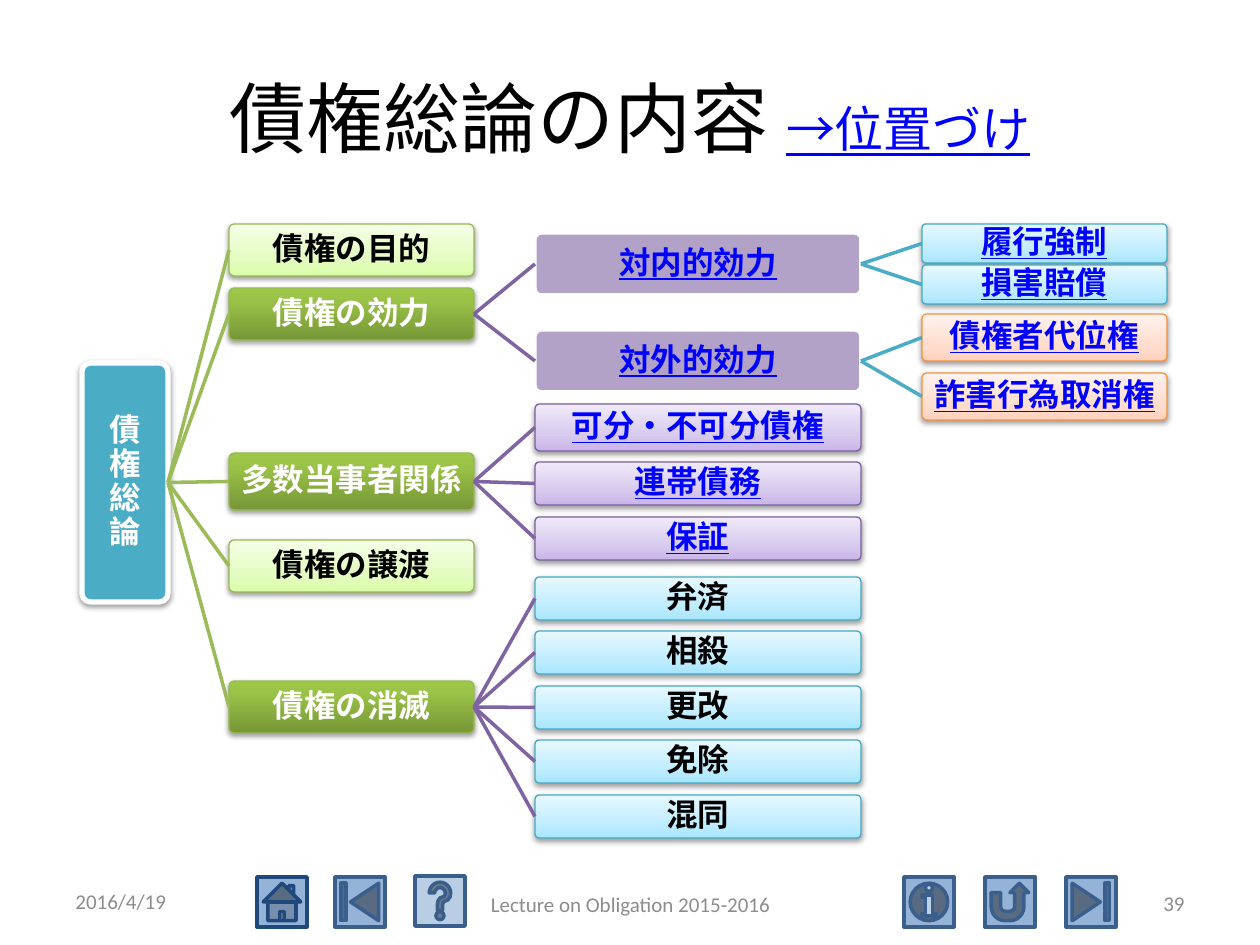
from lxml import etree
from pptx import Presentation
from pptx.dml.color import RGBColor
from pptx.enum.shapes import MSO_CONNECTOR as Connector, MSO_SHAPE as Preset
from pptx.enum.text import MSO_ANCHOR as Anchor, PP_ALIGN as Align
from pptx.oxml import parse_xml
from pptx.oxml.ns import nsdecls, qn
from pptx.util import Pt

PX = 914400 / 126
FONT = "Calibri"
COLORS = {
    "black": "000000", "white": "FFFFFF", "link": "0000FF", "gray": "8C8C8C",
    "teal": "4BACC6", "green": "9BBB59", "purple": "8064A2", "lilac": "B3A2C7",
    "button": "95B3D7", "help": "B9CDE5", "button_line": "3A5F8C", "home_line": "1F497D",
    "green_line": "98B955", "blue_line": "46AAC5", "orange_line": "F69240",
    "violet_line": "7D60A0",
}

# Box styles: fill (a colour name, or gradient stops from the bottom up), line, text
STYLES = {
    "root": dict(fill="teal", line="white", width=3, color="white", shadow=True),
    "pale_green": dict(fill=[(0, "DAFDA7"), (35, "E4FCC2"), (100, "F5FFE7")],
                       line="green_line", color="black", shadow=True),
    "green": dict(fill=[(0, "779737"), (80, "9BC348"), (100, "9DC746")],
                  line="green_line", color="white", shadow=True),
    "lilac": dict(fill="lilac", line="white", width=2, color="link"),
    "violet": dict(fill=[(0, "C9B5E8"), (35, "D8CBEE"), (100, "F0EAF9")],
                   line="violet_line", color="link", shadow=True),
    "blue": dict(fill=[(0, "A7E6FF"), (35, "C1EDFF"), (100, "E7F8FF")],
                 line="blue_line", color="black", shadow=True),
    "orange": dict(fill=[(0, "FFD2BD"), (35, "FFDED0"), (100, "FFF2ED")],
                   line="orange_line", color="link", shadow=True),
}
STYLES["blue_link"] = {**STYLES["blue"], "color": "link"}

# Tree levels: left, width, colour of the branches to the next level
LEVELS = [(82, 86, "green"), (229, 245, "purple"), (535, 326, "teal"), (922, 245, None)]

# Tree nodes: text, style, top, height, children
DISCHARGES = ["弁済", "相殺", "更改", "免除", "混同"]
TREE = ("債\n権\n総\n論", "root", 363, 239, [
    ("債権の目的", "pale_green", 224, 52, []),
    ("債権の効力", "green", 288, 52, [
        ("対内的効力", "lilac", 233, 62, [
            ("履行強制", "blue_link", 224, 39, []),
            ("損害賠償", "blue_link", 265, 39, []),
        ]),
        ("対外的効力", "lilac", 330, 62, [
            ("債権者代位権", "orange", 314, 47, []),
            ("詐害行為取消権", "orange", 373, 47, []),
        ]),
    ]),
    ("多数当事者関係", "green", 453, 57, [
        ("可分・不可分債権", "violet", 404, 47, []),
        ("連帯債務", "violet", 462, 43, []),
        ("保証", "violet", 517, 43, []),
    ]),
    ("債権の譲渡", "pale_green", 540, 52, []),
    ("債権の消滅", "green", 681, 52, [
        (text, "blue", 577 + round(54.4 * index), 43, [])
        for index, text in enumerate(DISCHARGES)
    ]),
])

# Navigation buttons: preset, left, top, fill, line
BUTTONS = [
    (Preset.ACTION_BUTTON_BEGINNING, 335, 877, "button", "button_line"),
    (Preset.ACTION_BUTTON_END, 1066, 877, "button", "button_line"),
    (Preset.ACTION_BUTTON_RETURN, 985, 877, "button", "button_line"),
    (Preset.ACTION_BUTTON_HOME, 257, 877, "button", "home_line"),
    (Preset.ACTION_BUTTON_INFORMATION, 904, 877, "button", "button_line"),
    (Preset.ACTION_BUTTON_HELP, 415, 876, "help", "button_line"),
]
BUTTON_SIZE = 50

# Text boxes: left, top, width, height, alignment, runs of (text, size, colour)
TEXTS = [
    (63, 38, 1134, 157, Align.CENTER,
     [("債権総論の内容 ", 44, "black"), ("→位置づけ", 28, "link")]),
    (63, 876, 294, 50, Align.LEFT, [("2016/4/19", 12, "gray")]),
    (431, 879, 399, 50, Align.CENTER, [("Lecture on Obligation 2015-2016", 12, "gray")]),
    (903, 878, 294, 50, Align.RIGHT, [("39", 12, "gray")]),
]


def emu(*lengths):
    return [round(length * PX) for length in lengths]


def rgb(name):
    return RGBColor.from_string(COLORS[name])


def write(frame, runs, align=Align.CENTER, bold=False, spacing=None, inset=None):
    """Fill a text frame with one paragraph; link-coloured runs are underlined."""
    frame.word_wrap = True
    frame.vertical_anchor = Anchor.MIDDLE
    if inset is not None:
        margin = emu(inset)[0]
        frame.margin_left = frame.margin_right = margin
        frame.margin_top = frame.margin_bottom = margin
    paragraph = frame.paragraphs[0]
    paragraph.alignment = align
    paragraph.line_spacing = spacing
    for text, size, color in runs:
        for index, line in enumerate(text.split("\n")):
            if index:
                paragraph.add_line_break()
            run = paragraph.add_run()
            run.text = line
            font = run.font
            font.name, font.size, font.bold = FONT, Pt(size), bold
            font.color.rgb = rgb(color)
            if color == "link":
                font.underline = True


def add_box(shapes, preset, box, fill, line, width=0.75):
    shape = shapes.add_shape(preset, *emu(*box))
    shape.shadow.inherit = False
    if isinstance(fill, str):
        shape.fill.solid()
        shape.fill.fore_color.rgb = rgb(fill)
    else:
        shape.fill.background()
        stops = "".join(f'<a:gs pos="{position * 1000}"><a:srgbClr val="{color}"/></a:gs>'
                        for position, color in fill)
        properties = shape._element.spPr
        properties.replace(properties.find(qn("a:noFill")), parse_xml(
            f'<a:gradFill {nsdecls("a")} rotWithShape="1"><a:gsLst>{stops}</a:gsLst>'
            '<a:lin ang="16200000" scaled="0"/></a:gradFill>'))
    shape.line.color.rgb = rgb(line)
    shape.line.width = Pt(width)
    return shape


def add_shadow(shape):
    shape._element.spPr.find(qn("a:effectLst")).append(parse_xml(
        f'<a:outerShdw {nsdecls("a")} blurRad="40000" dist="20000" dir="5400000" '
        'rotWithShape="0"><a:srgbClr val="000000"><a:alpha val="38000"/></a:srgbClr>'
        '</a:outerShdw>'))


def add_branch(shapes, parent, child, color):
    branch = shapes.add_connector(Connector.STRAIGHT, 0, 0, 0, 0)
    branch.begin_connect(parent, 3)
    branch.end_connect(child, 1)
    branch.line.color.rgb = rgb(color)
    branch.line.width = Pt(2)
    etree.SubElement(branch._element.spPr, qn("a:effectLst"))


def add_node(shapes, node, level=0):
    """Draw a node, then its children and the branches to them."""
    text, style_name, top, height, children = node
    left, width, branch_color = LEVELS[level]
    style = STYLES[style_name]
    shape = add_box(shapes, Preset.ROUNDED_RECTANGLE, (left, top, width, height),
                    style["fill"], style["line"], style.get("width", 0.75))
    shape.adjustments[0] = 0.1
    if style.get("shadow"):
        add_shadow(shape)
    write(shape.text_frame, [(text, 18, style["color"])], bold=True, spacing=0.9, inset=1)
    for child in children:
        add_branch(shapes, shape, add_node(shapes, child, level + 1), branch_color)
    return shape


def main():
    presentation = Presentation()
    presentation.slide_width, presentation.slide_height = emu(1260, 945)
    slide = presentation.slides.add_slide(presentation.slide_layouts[6])
    shapes = slide.shapes

    # Navigation buttons
    for preset, left, top, fill, line in BUTTONS:
        add_box(shapes, preset, (left, top, BUTTON_SIZE, BUTTON_SIZE), fill, line, width=2)

    # Title and footer
    for left, top, width, height, align, runs in TEXTS:
        text_box = shapes.add_textbox(*emu(left, top, width, height))
        write(text_box.text_frame, runs, align=align)

    # Tree
    add_node(shapes, TREE)
    presentation.save("out.pptx")


if __name__ == "__main__":
    main()
